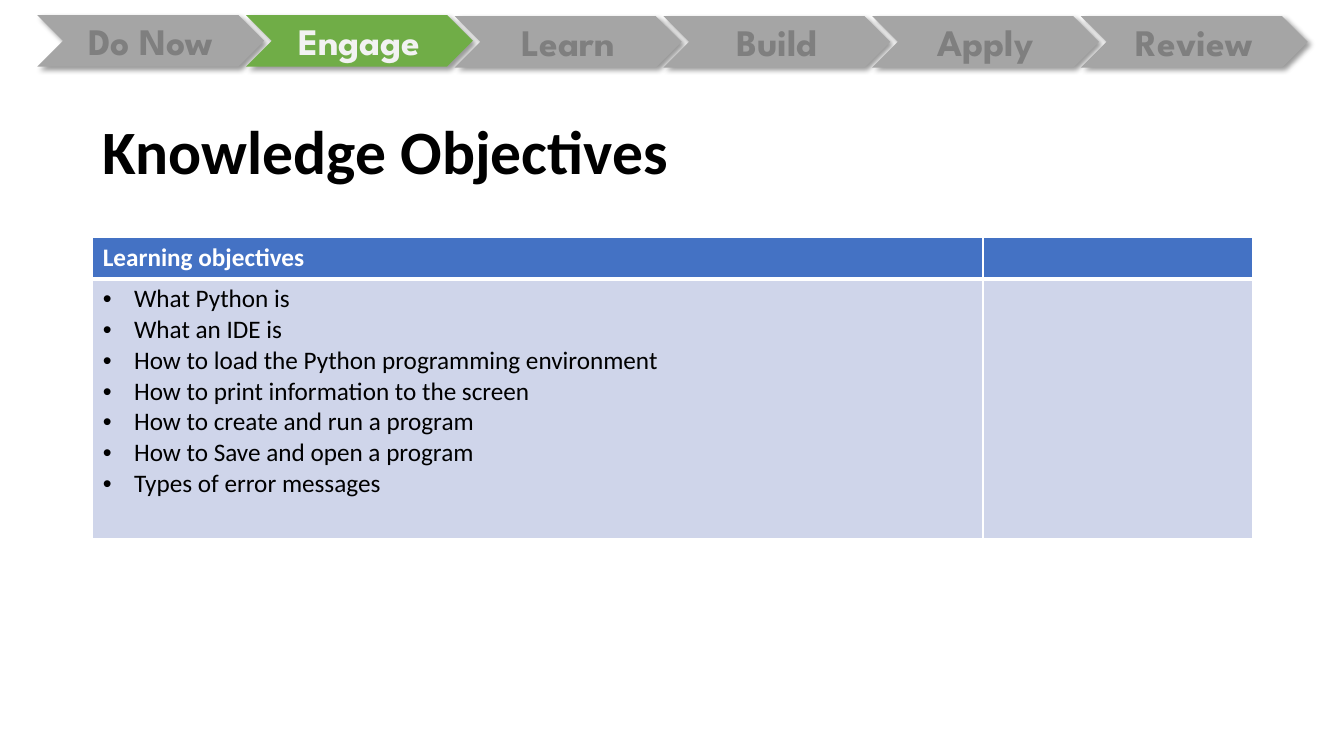
from lxml import etree
from pptx import Presentation
from pptx.dml.color import RGBColor
from pptx.enum import shapes, text
from pptx.oxml import ns
from pptx.util import Inches, Pt

GREY = RGBColor(0xA5, 0xA5, 0xA5)
DIM = RGBColor(0x7F, 0x7F, 0x7F)
GREEN = RGBColor(0x70, 0xAD, 0x47)
PALE = RGBColor(0xF2, 0xF2, 0xF2)
BLUE = RGBColor(0x44, 0x72, 0xC4)
LILAC = RGBColor(0xCF, 0xD5, 0xEA)
WHITE = RGBColor(0xFF, 0xFF, 0xFF)
BLACK = RGBColor(0, 0, 0)

STAGES = ["Do Now", "Engage", "Learn", "Build", "Apply", "Review"]
CURRENT = "Engage"
GOALS = [
    "What Python is",
    "What an IDE is",
    "How to load the Python programming environment",
    "How to print information to the screen",
    "How to create and run a program",
    "How to Save and open a program",
    "Types of error messages",
]


def add(parent, tag, **attrs):
    """Append a drawing element with the given attributes."""
    node = etree.SubElement(parent, ns.qn(tag))
    for key, value in attrs.items():
        node.set(key, str(value))
    return node


def style(para, color, **values):
    font = para.font
    for key, value in values.items():
        setattr(font, key, value)
    font.color.rgb = color


def shade(shape):
    """Give the shape a soft shadow to the lower right."""
    shape.shadow.inherit = False
    effects = shape._element.spPr.find(ns.qn("a:effectLst"))
    outer = add(effects, "a:outerShdw", blurRad=Pt(4), dist=Pt(3),
                dir=45 * 60000, algn="tl", rotWithShape=0)
    add(add(outer, "a:srgbClr", val=BLACK), "a:alpha", val=40000)


def stage(slide, index, label):
    active = label == CURRENT
    top = 0.15 if index < 2 else 0.16
    arrow = slide.shapes.add_shape(
        shapes.MSO_SHAPE.CHEVRON, Inches(0.37 + 2.07 * index), Inches(top),
        Inches(2.25), Inches(0.51))
    arrow.fill.solid()
    arrow.fill.fore_color.rgb = GREEN if active else GREY
    arrow.line.fill.background()
    shade(arrow)
    frame = arrow.text_frame
    frame.vertical_anchor = text.MSO_ANCHOR.MIDDLE
    para = frame.paragraphs[0]
    para.text = label
    para.alignment = text.PP_ALIGN.CENTER
    style(para, PALE if active else DIM,
          name="League Spartan", size=Pt(26.7), bold=True)


def heading(slide, words):
    title = slide.shapes.title
    box = {"left": 0.92, "top": 0.81, "width": 11.5, "height": 1.45}
    for key, value in box.items():
        setattr(title, key, Inches(value))
    frame = title.text_frame
    frame.text = words
    frame.auto_size = text.MSO_AUTO_SIZE.NONE
    frame.vertical_anchor = text.MSO_ANCHOR.MIDDLE
    para = frame.paragraphs[0]
    para.alignment = text.PP_ALIGN.LEFT
    para.line_spacing = 0.9
    style(para, BLACK, name="Calibri", size=Pt(44), bold=True)


def paint(cell, color, edges):
    """Set the borders of a cell, then its fill."""
    props = cell._tc.get_or_add_tcPr()
    for side, width in edges.items():
        line = add(props, "a:ln" + side, w=Pt(width))
        add(add(line, "a:solidFill"), "a:srgbClr", val=WHITE)
    cell.fill.solid()
    cell.fill.fore_color.rgb = color


def bullet(para):
    props = para._p.get_or_add_pPr()
    props.set("marL", str(Inches(0.31)))
    props.set("indent", str(-Inches(0.31)))
    add(props, "a:buFont", typeface="Arial")
    add(props, "a:buChar", char="•")


def goals(slide):
    table = slide.shapes.add_table(
        2, 2, Inches(0.92), Inches(2.36), Inches(11.5), Inches(2.98)).table
    for column, width in zip(table.columns, (8.83, 2.67)):
        column.width = Inches(width)
    for row, height, color, top, base in zip(
            table.rows, (0.4, 2.58), (BLUE, LILAC), (1, 3), (3, 1)):
        row.height = Inches(height)
        for cell in row.cells:
            paint(cell, color, {"L": 1, "R": 1, "T": top, "B": base})

    head = table.cell(0, 0).text_frame.paragraphs[0]
    head.text = "Learning objectives"
    style(head, WHITE, name="Calibri", size=Pt(18), bold=True)

    body = table.cell(1, 0).text_frame
    body.text = "\n".join(GOALS)
    for para in body.paragraphs:
        bullet(para)
        style(para, BLACK, name="Calibri", size=Pt(18), bold=False)


def main():
    deck = Presentation()
    deck.slide_width = Inches(13.33)
    deck.slide_height = Inches(7.5)
    slide = deck.slides.add_slide(deck.slide_layouts[5])
    for index, label in enumerate(STAGES):
        stage(slide, index, label)
    heading(slide, "Knowledge Objectives")
    goals(slide)
    deck.save("out.pptx")


if __name__ == "__main__":
    main()
